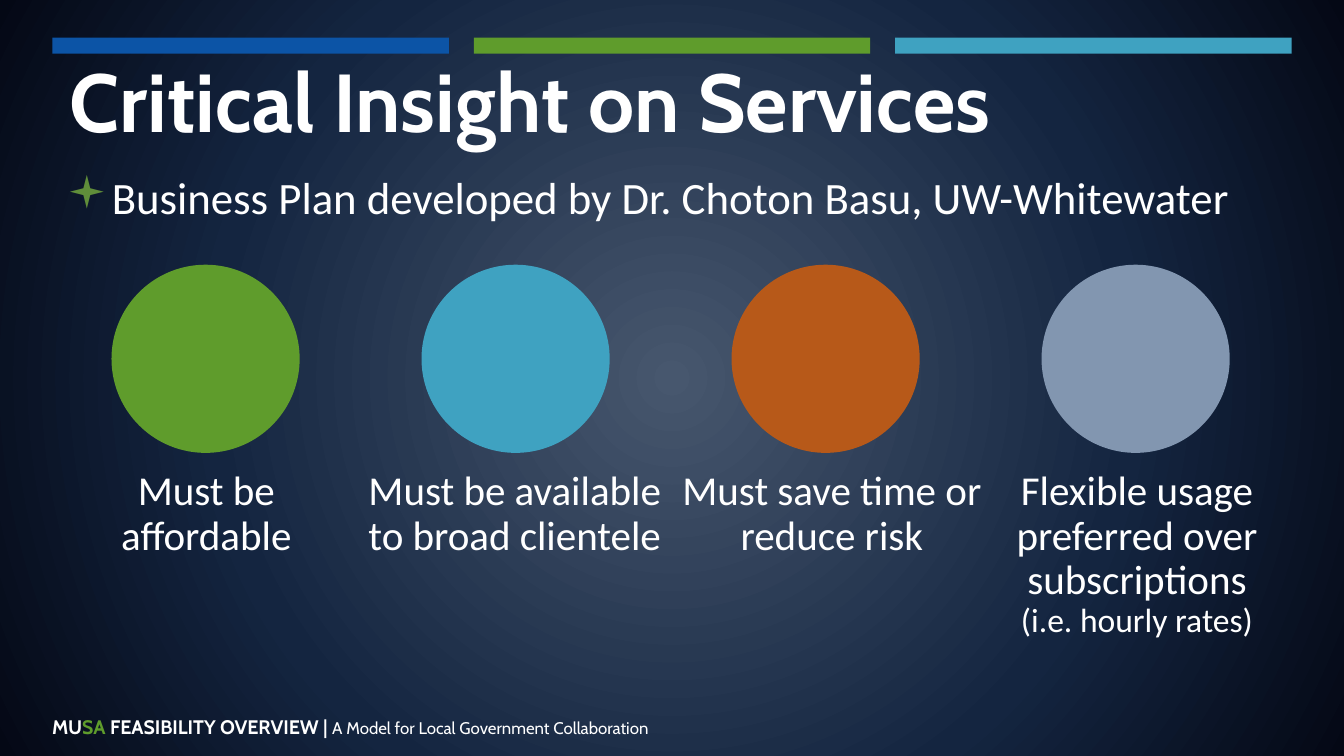
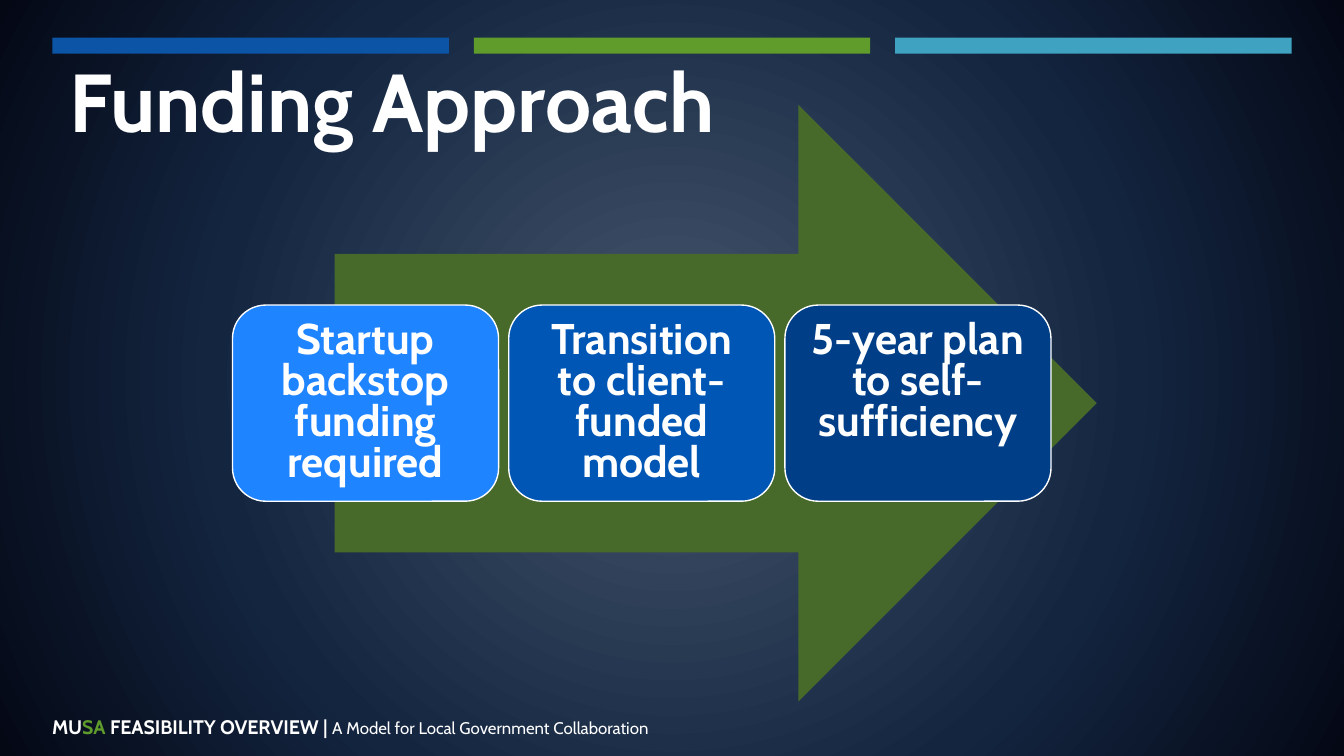
import pptx
import pptx.util
import pptx.dml.color
import pptx.enum.shapes
import pptx.enum.text
import pptx.oxml.ns
import lxml.etree
from dataclasses import dataclass

Inches = pptx.util.Inches
Pt = pptx.util.Pt
RGB = pptx.dml.color.RGBColor.from_string
Shape = pptx.enum.shapes.MSO_SHAPE
Align = pptx.enum.text.PP_ALIGN
Anchor = pptx.enum.text.MSO_ANCHOR
qn = pptx.oxml.ns.qn


@dataclass(frozen=True)
class Theme:
    heading: str = "Cabin"
    body: str = "Calibri"
    symbol: str = "Wingdings"
    white: str = "FFFFFF"
    blue: str = "0C54A6"
    green: str = "5F9C2C"
    teal: str = "3FA2C1"
    orange: str = "B75919"
    slate: str = "8296B0"
    arrow: str = "476A2B"
    bullet: str = "608E3A"
    steps: tuple = ("1E84FF", "0056B4", "003F87")
    backdrop: tuple = ((0, "47576E"), (60, "142540"), (100, "040815"))
    title_size: float = 44
    body_size: float = 24
    step_size: float = 23
    label_size: float = 22
    note_size: float = 18
    footer_size: float = 10.5
    tagline_size: float = 9


theme = Theme()


def add_block(shapes, kind, left, top, width, height, fill):
    block = shapes.add_shape(kind, Inches(left), Inches(top), Inches(width), Inches(height))
    block.shadow.inherit = False
    block.fill.solid()
    block.fill.fore_color.rgb = RGB(fill)
    block.line.fill.background()
    return block


def write(box, text, size, face, bold=False, align=Align.LEFT, spacing=1.0, anchor=Anchor.TOP):
    frame = box.text_frame
    frame.word_wrap = True
    frame.vertical_anchor = anchor
    frame.text = text
    para = frame.paragraphs[0]
    para.alignment = align
    para.line_spacing = spacing
    for span in para.runs:
        span.font.size = Pt(size)
        span.font.name = face
        span.font.bold = bold
        span.font.color.rgb = RGB(theme.white)
    return para


deck = pptx.Presentation()
deck.slide_width = Inches(10)
deck.slide_height = deck.slide_width * 9 // 16

bar_width = 2.95
bar_pitch = (9.22 - bar_width) / 2
footer_spans = [
    ("MU", theme.footer_size, theme.white, True),
    ("SA", theme.footer_size, theme.green, True),
    (" FEASIBILITY OVERVIEW | ", theme.footer_size, theme.white, True),
    ("A Model for Local Government Collaboration", theme.tagline_size, theme.white, False),
]

for number in range(2):
    page = deck.slides.add_slide(deck.slide_layouts[6])
    page.background.fill.gradient()
    gradient = page.background._cSld.find(".//" + qn("a:gradFill"))
    for child in list(gradient):
        gradient.remove(child)
    stops = lxml.etree.SubElement(gradient, qn("a:gsLst"))
    for position, color in theme.backdrop:
        stop = lxml.etree.SubElement(stops, qn("a:gs"), pos=str(position * 1000))
        lxml.etree.SubElement(stop, qn("a:srgbClr"), val=color)
    circle = lxml.etree.SubElement(gradient, qn("a:path"), {"path": "circle"})
    lxml.etree.SubElement(circle, qn("a:fillToRect"), dict.fromkeys("ltrb", "50000"))

    for index, color in enumerate((theme.blue, theme.green, theme.teal)):
        add_block(page.shapes, Shape.RECTANGLE, 0.39 + index * bar_pitch, 0.28, bar_width, 0.12, color)

    footer = page.shapes.add_textbox(Inches(0.29), Inches(5.27), Inches(5.04), Inches(0.29))
    para = write(footer, "", theme.footer_size, theme.heading)
    for text, size, color, bold in footer_spans:
        span = para.add_run()
        span.text = text
        span.font.size = Pt(size)
        span.font.name = theme.heading
        span.font.bold = bold
        span.font.color.rgb = RGB(color)

services, funding = deck.slides
add_block(funding.shapes, Shape.RIGHT_ARROW, 2.49, 0.78, 5.67, 4.44, theme.arrow)

for page, title in ((services, "Critical Insight on Services"), (funding, "Funding Approach")):
    box = page.shapes.add_textbox(Inches(0.42), Inches(0.42), Inches(9.19), Inches(0.72))
    write(box, title, theme.title_size, theme.heading, bold=True, spacing=0.95, anchor=Anchor.MIDDLE)

intro = services.shapes.add_textbox(Inches(0.4), Inches(1.24), Inches(9.19), Inches(1.36))
para = write(intro, "Business Plan developed by Dr. Choton Basu, UW-Whitewater",
             theme.body_size, theme.body, spacing=0.95)
properties = para._p.get_or_add_pPr()
properties.set("marL", str(Inches(0.25)))
properties.set("indent", str(Inches(-0.25)))
bullet_color = lxml.etree.SubElement(properties, qn("a:buClr"))
lxml.etree.SubElement(bullet_color, qn("a:srgbClr"), val=theme.bullet)
lxml.etree.SubElement(properties, qn("a:buFont"), typeface=theme.symbol)
lxml.etree.SubElement(properties, qn("a:buChar"), char="▪")

circle_size = 1.4
circle_pitch = (8.32 - circle_size) / 3
insights = [
    ("Must be affordable", theme.green, 0.49, 2.09, 0.84),
    ("Must be available to broad clientele", theme.teal, 2.64, 2.38, 1.14),
    ("Must save time or reduce risk", theme.orange, 4.95, 2.48, 1.27),
    ("Flexible usage preferred over subscriptions\v(i.e. hourly rates)", theme.slate, 7.22, 2.48, 1.27),
]
for index, (text, color, left, width, height) in enumerate(insights):
    group = services.shapes.add_group_shape()
    add_block(group.shapes, Shape.OVAL, 0.83 + index * circle_pitch, 1.97, circle_size, circle_size, color)
    label = group.shapes.add_textbox(Inches(left), Inches(3.45), Inches(width), Inches(height))
    para = write(label, text, theme.label_size, theme.body, align=Align.CENTER, spacing=0.9)
    for note in para.runs[1:]:
        note.font.size = Pt(theme.note_size)

step_width = 1.98
step_pitch = (6.09 - step_width) / 2
steps = (
    "Startup backstop funding required",
    "Transition to client-funded model",
    "5-year plan to self-sufficiency",
)
for index, (text, color) in enumerate(zip(steps, theme.steps)):
    step = add_block(funding.shapes, Shape.ROUNDED_RECTANGLE,
                     1.73 + index * step_pitch, 2.27, step_width, 1.46, color)
    step.adjustments[0] = 0.17
    step.line.color.rgb = RGB(theme.white)
    step.line.width = Pt(0.75)
    write(step, text, theme.step_size, theme.heading, bold=True, align=Align.CENTER, spacing=0.8)

deck.save("out.pptx")
